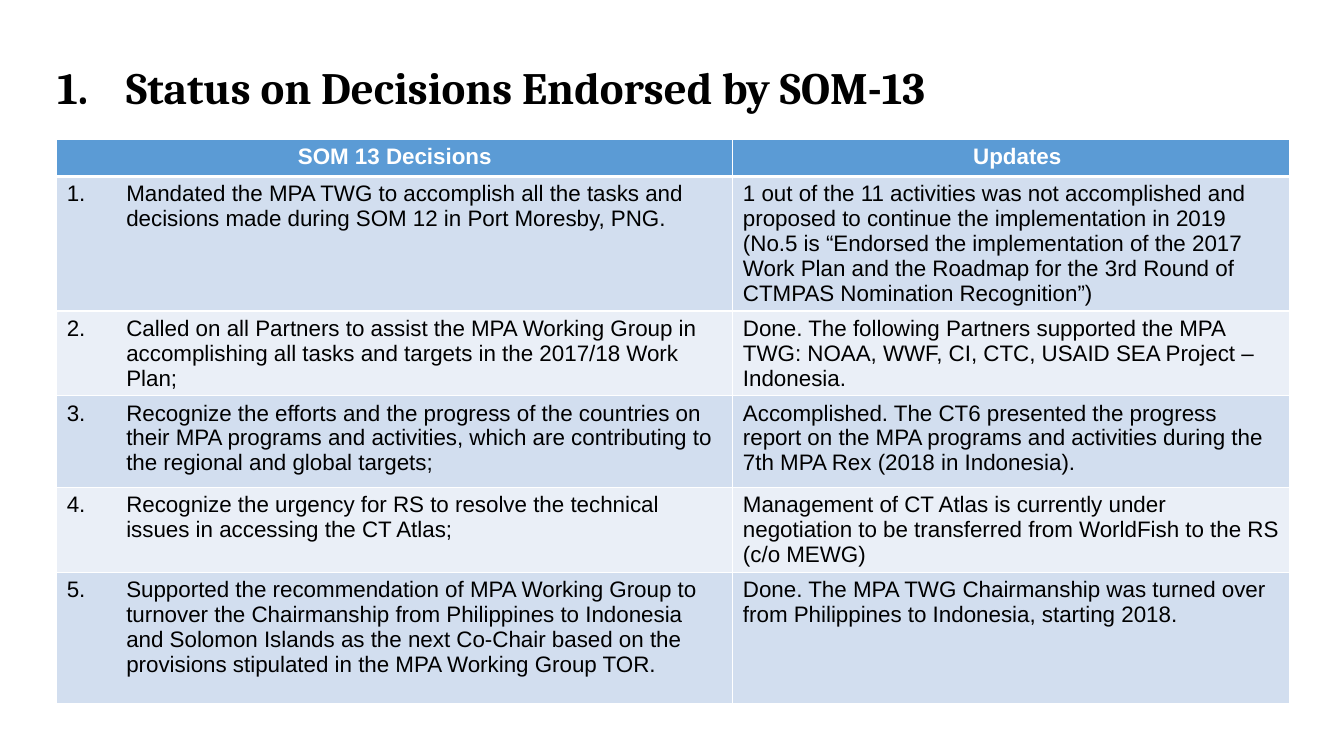
from lxml.etree import SubElement
from pptx import Presentation
from pptx.dml.color import RGBColor
from pptx.enum.text import MSO_ANCHOR, PP_ALIGN
from pptx.oxml.ns import qn
from pptx.util import Pt

HEADINGS = ("SOM 13 Decisions", "Updates")
DECISIONS = [
    ("Mandated the MPA TWG to accomplish all the tasks and decisions made during "
     "SOM 12 in Port Moresby, PNG.",
     "1 out of the 11 activities was not accomplished and proposed to continue the "
     "implementation in 2019 (No.5 is “Endorsed the implementation of the 2017 Work Plan "
     "and the Roadmap for the 3rd Round of CTMPAS Nomination Recognition”)"),
    ("Called on all Partners to assist the MPA Working Group in accomplishing all tasks "
     "and targets in the 2017/18 Work Plan;",
     "Done. The following Partners supported the MPA TWG: NOAA, WWF, CI, CTC, "
     "USAID SEA Project – Indonesia."),
    ("Recognize the efforts and the progress of the countries on their MPA programs and "
     "activities, which are contributing to the regional and global targets;",
     "Accomplished. The CT6 presented the progress report on the MPA programs and "
     "activities during the 7th MPA Rex (2018 in Indonesia)."),
    ("Recognize the urgency for RS to resolve the technical issues in accessing the "
     "CT Atlas;",
     "Management of CT Atlas is currently under negotiation to be transferred from "
     "WorldFish to the RS (c/o MEWG)"),
    ("Supported the recommendation of MPA Working Group to turnover the Chairmanship from "
     "Philippines to Indonesia and Solomon Islands as the next Co-Chair based on the "
     "provisions stipulated in the MPA Working Group TOR.",
     "Done. The MPA TWG Chairmanship was turned over from Philippines to Indonesia, "
     "starting 2018."),
]
COLUMN_WIDTHS = (483, 397.5)
ROW_HEIGHTS = (26.6, 65.5, 46, 65.5, 39.6, 93.6)
HEADER_FILL = "5B9BD5"
BAND_FILLS = ("D2DEEF", "EAEFF7")


def color(hex_code):
    """Return the colour for a hex string."""
    return RGBColor.from_string(hex_code)


def write(frame, text, size=16, font="Arial", ink="000000", bold=False,
          align=PP_ALIGN.LEFT, hanging=0, spacing=None):
    """Write one formatted paragraph, with a hanging indent where asked."""
    frame.word_wrap = True
    paragraph = frame.paragraphs[0]
    paragraph.alignment = align
    if spacing:
        paragraph.line_spacing = spacing
    if hanging:
        properties = paragraph._p.get_or_add_pPr()
        properties.set("marL", str(Pt(hanging)))
        properties.set("indent", str(-Pt(hanging)))
        tabs = SubElement(properties, qn("a:tabLst"))
        SubElement(tabs, qn("a:tab"), pos=str(Pt(hanging)), algn="l")
    run = paragraph.add_run()
    run.text = text
    run.font.size = Pt(size)
    run.font.name = font
    run.font.bold = bold
    run.font.color.rgb = color(ink)


def style_cell(cell, fill, top=1, bottom=1):
    """Fill a cell and draw its white borders."""
    cell.fill.solid()
    cell.fill.fore_color.rgb = color(fill)
    properties = cell._tc.get_or_add_tcPr()
    sides = (("lnL", 1), ("lnR", 1), ("lnT", top), ("lnB", bottom))
    for position, (side, width) in enumerate(sides):
        border = SubElement(properties, qn(f"a:{side}"), w=str(Pt(width)))
        paint = SubElement(border, qn("a:solidFill"))
        SubElement(paint, qn("a:srgbClr"), val="FFFFFF")
        properties.insert(position, border)


def add_title(slide):
    """Add the numbered slide title."""
    title = slide.shapes.add_textbox(Pt(34), Pt(42.5), Pt(858), Pt(42.5))
    title.text_frame.vertical_anchor = MSO_ANCHOR.BOTTOM
    write(title.text_frame, "1.\tStatus on Decisions Endorsed by SOM-13", size=32,
          font="Cambria", bold=True, hanging=49, spacing=0.9)


def add_decisions(slide):
    """Add the table of decisions and their updates."""
    table = slide.shapes.add_table(
        len(ROW_HEIGHTS), len(COLUMN_WIDTHS), Pt(40.5), Pt(99.5),
        Pt(sum(COLUMN_WIDTHS)), Pt(sum(ROW_HEIGHTS))).table
    for column, width in zip(table.columns, COLUMN_WIDTHS):
        column.width = Pt(width)
    for row, height in zip(table.rows, ROW_HEIGHTS):
        row.height = Pt(height)
    for index, heading in enumerate(HEADINGS):
        cell = table.cell(0, index)
        style_cell(cell, HEADER_FILL, bottom=3)
        write(cell.text_frame, heading, ink="FFFFFF", bold=True, align=PP_ALIGN.CENTER)
    table.cell(0, 1).margin_left = Pt(16)
    for number, (decision, update) in enumerate(DECISIONS, 1):
        decision_cell, update_cell = table.rows[number].cells
        for cell in (decision_cell, update_cell):
            style_cell(cell, BAND_FILLS[(number - 1) % 2], top=3 if number == 1 else 1)
        write(decision_cell.text_frame, f"{number}. \t{decision}", hanging=42.5)
        write(update_cell.text_frame, update)


def main():
    """Build and save the slide."""
    deck = Presentation()
    deck.slide_width, deck.slide_height = Pt(960), Pt(540)
    slide = deck.slides.add_slide(deck.slide_layouts[6])
    add_decisions(slide)
    add_title(slide)
    deck.save("out.pptx")


if __name__ == "__main__":
    main()
